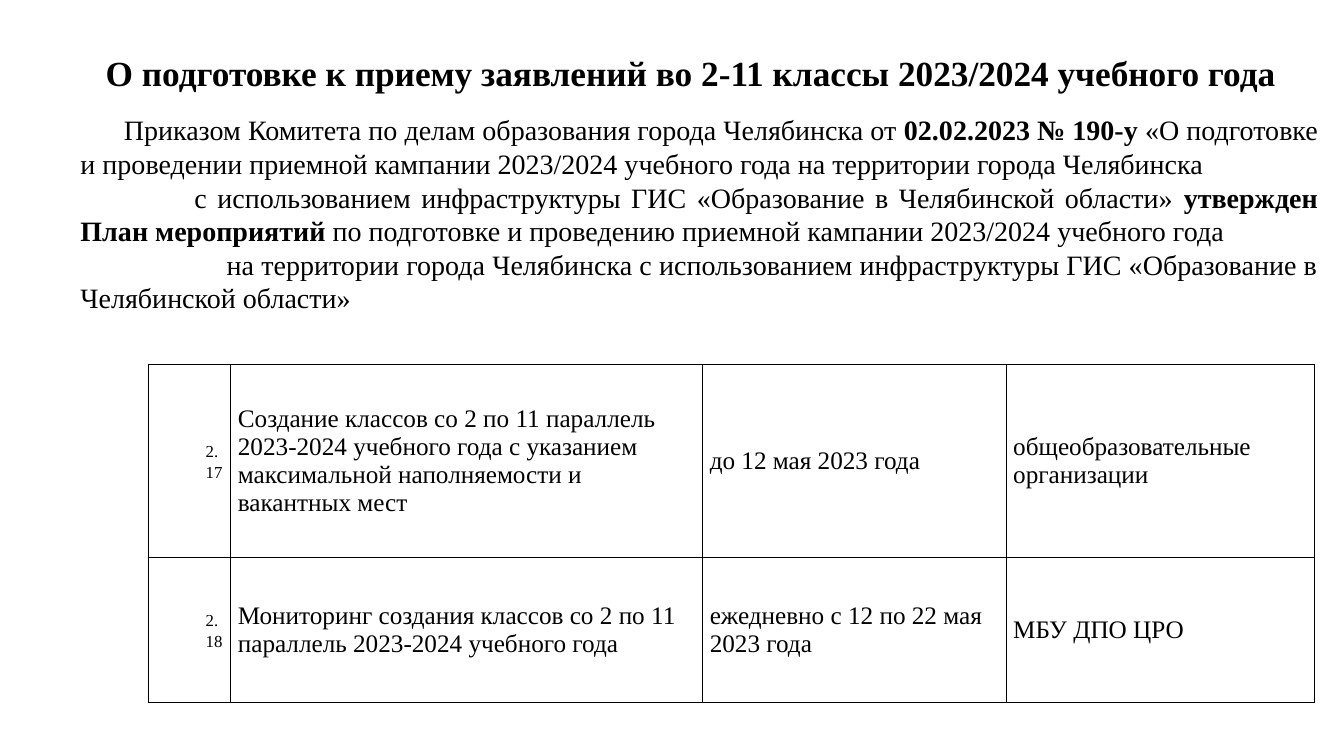
from lxml.etree import SubElement
from pptx import Presentation
from pptx.dml.color import RGBColor
from pptx.enum.text import MSO_ANCHOR, PP_ALIGN
from pptx.oxml.ns import qn
from pptx.util import Inches, Pt

COLORS = {"text": "000000", "border": "000000"}
FONT = "Times New Roman"

TITLE = "О подготовке к приему заявлений во 2-11 классы 2023/2024 учебного года "

# Each entry: first-line indent in inches, then (text, bold) spans
ORDER_TEXT = [
    (0.43, [
        ("Приказом Комитета по делам образования города Челябинска от ", False),
        ("02.02.2023 № 190-у ", True),
        ("«О подготовке и проведении приемной кампании 2023/2024 учебного года "
         "на территории города Челябинска", False),
    ]),
    (1.13, [
        ("с использованием инфраструктуры ГИС «Образование в Челябинской области» ", False),
        ("утвержден План мероприятий ", True),
        ("по подготовке и проведению приемной кампании 2023/2024 учебного года", False),
    ]),
    (1.45, [
        ("на территории города Челябинска с использованием инфраструктуры "
         "ГИС «Образование в Челябинской области»", False),
    ]),
]

PLAN_ROWS = [
    ["2.17",
     "Создание классов со 2 по 11 параллель 2023-2024 учебного года "
     "с указанием максимальной наполняемости и вакантных мест",
     "до 12 мая 2023 года",
     "общеобразовательные организации"],
    ["2.18",
     "Мониторинг создания классов со 2 по 11 параллель 2023-2024 учебного года",
     "ежедневно с 12 по 22 мая 2023 года",
     "МБУ ДПО ЦРО"],
]
COLUMN_WIDTHS = [0.82, 4.68, 3.01, 3.06]
ROW_HEIGHTS = [1.91, 1.44]


def apply_format(target, values):
    for name, value in values.items():
        setattr(target, name, value)


def add_span(para, text, size, bold=False):
    span = para.add_run()
    span.text = text
    apply_format(span.font, {"name": FONT, "size": Pt(size), "bold": bold})
    span.font.color.rgb = RGBColor.from_string(COLORS["text"])


def add_text_box(page, left, top, width, height, anchor):
    box = page.shapes.add_textbox(*map(Inches, (left, top, width, height)))
    apply_format(box.text_frame, {"word_wrap": True, "vertical_anchor": anchor})
    return box.text_frame


def add_title(page):
    frame = add_text_box(page, 0.92, 0.4, 11.95, 0.69, MSO_ANCHOR.MIDDLE)
    para = frame.paragraphs[0]
    apply_format(para, {"alignment": PP_ALIGN.CENTER, "line_spacing": 0.9})
    add_span(para, TITLE, 25.2, bold=True)


def add_order_text(page):
    frame = add_text_box(page, 0.7, 1.07, 12.47, 2.12, MSO_ANCHOR.TOP)
    for index, (indent, spans) in enumerate(ORDER_TEXT):
        para = frame.add_paragraph() if index else frame.paragraphs[0]
        para.alignment = PP_ALIGN.JUSTIFY
        para._p.get_or_add_pPr().set("indent", str(Inches(indent)))
        for text, bold in spans:
            add_span(para, text, 20, bold)


def add_borders(cell):
    properties = cell._tc.get_or_add_tcPr()
    for side in ("a:lnL", "a:lnR", "a:lnT", "a:lnB"):
        line = SubElement(properties, qn(side), w=str(Pt(1)))
        fill = SubElement(line, qn("a:solidFill"))
        SubElement(fill, qn("a:srgbClr"), val=COLORS["border"])


def fill_cell(cell, text, is_number):
    apply_format(cell, {
        "margin_left": Inches(0.07), "margin_right": Inches(0.07),
        "margin_top": 0, "margin_bottom": 0,
        "vertical_anchor": MSO_ANCHOR.MIDDLE,
    })
    add_borders(cell)
    cell.fill.background()
    para = cell.text_frame.paragraphs[0]
    if is_number:
        apply_format(para, {"level": 1, "line_spacing": 1.15})
    add_span(para, text, 12 if is_number else 18)


def add_plan_table(page):
    frame = page.shapes.add_table(
        len(PLAN_ROWS), len(COLUMN_WIDTHS), Inches(1.47), Inches(3.62),
        Inches(sum(COLUMN_WIDTHS)), Inches(sum(ROW_HEIGHTS)))
    table = frame.table
    apply_format(table, {"first_row": False, "horz_banding": False})
    for column, width in zip(table.columns, COLUMN_WIDTHS):
        column.width = Inches(width)
    for row, height, texts in zip(table.rows, ROW_HEIGHTS, PLAN_ROWS):
        row.height = Inches(height)
        for index, (cell, text) in enumerate(zip(row.cells, texts)):
            fill_cell(cell, text, is_number=index == 0)


def main():
    deck = Presentation()
    apply_format(deck, {"slide_width": Inches(13.33), "slide_height": Inches(7.5)})
    page = deck.slides.add_slide(deck.slide_layouts[6])

    # Heading and order summary
    add_title(page)
    add_order_text(page)

    # Action plan
    add_plan_table(page)

    deck.save("out.pptx")


if __name__ == "__main__":
    main()
